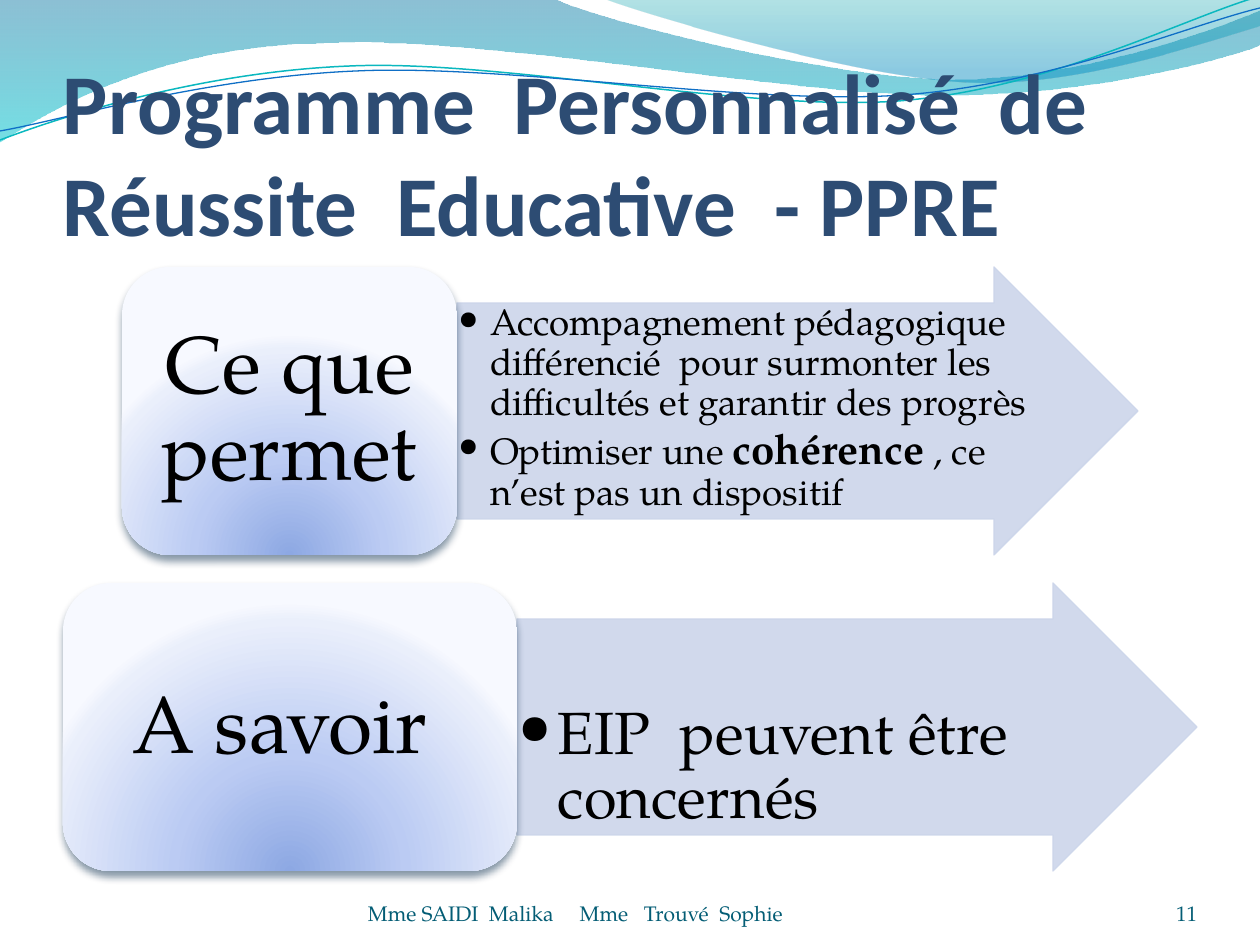
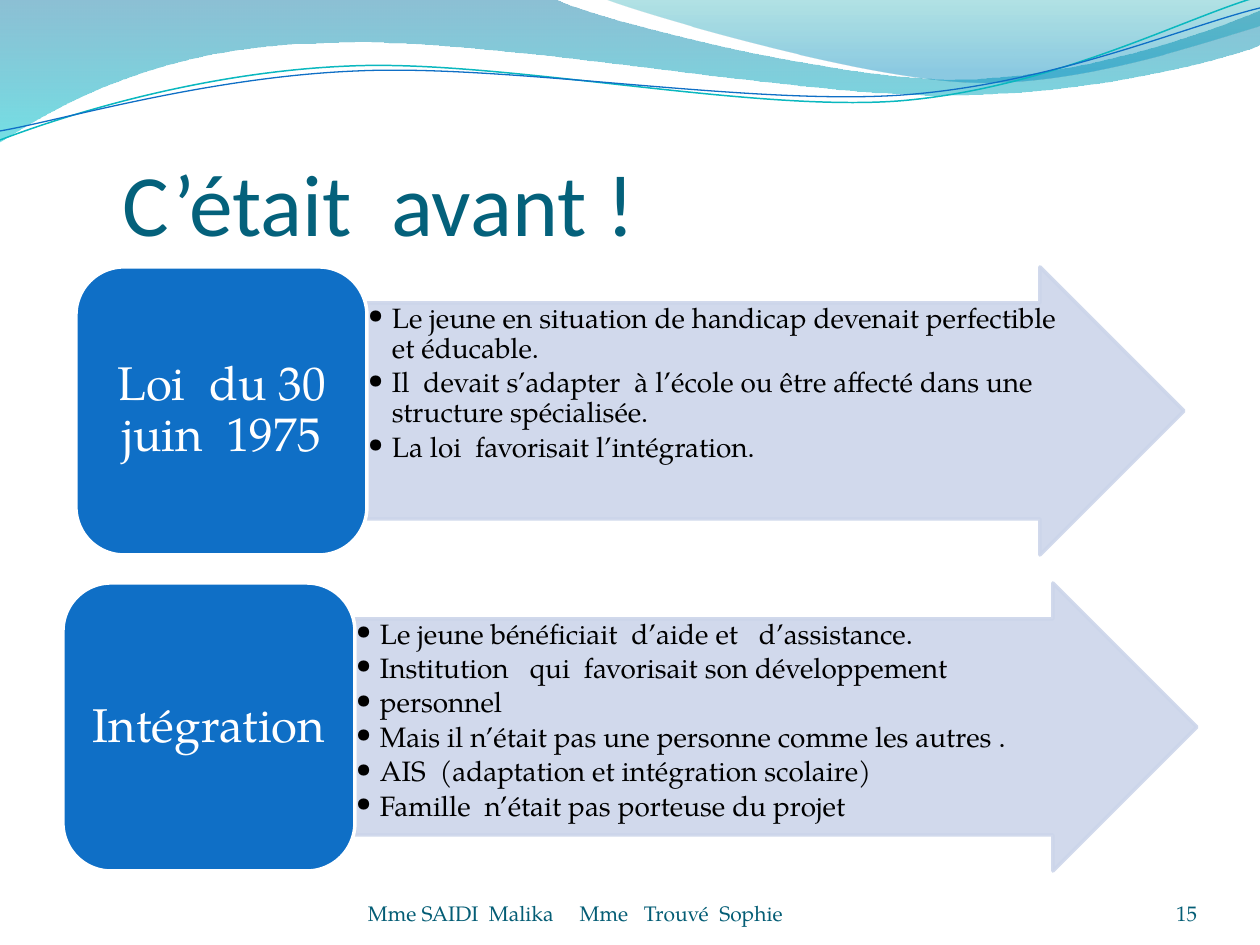
from dataclasses import dataclass

from lxml.etree import SubElement
from pptx import Presentation
from pptx.dml.color import RGBColor as RGB
from pptx.enum.shapes import MSO_SHAPE as SHAPE
from pptx.enum.text import MSO_ANCHOR as ANCHOR, PP_ALIGN as ALIGN
from pptx.oxml import parse_xml
from pptx.oxml.ns import nsdecls, qn
from pptx.util import Emu, Pt

SCALE = 914400 / 126
ROW_TOP, ROW_PITCH, ROW_HEIGHT = 267, 316, 288
LABEL_PAD = 14


@dataclass(frozen=True)
class Theme:
    head_font: str = "Calibri"
    body_font: str = "TeX Gyre Pagella"
    title: str = "04617B"
    title_bold: str = "2D4C73"
    footer: str = "045D75"
    text: str = "000000"
    light: str = "FFFFFF"
    blue: str = "0F6FC6"
    teal: str = "0AB8BF"
    arrow: str = "CCD5EA"
    shadow: str = "042747"
    wave: tuple = ((0, "0074A1", 45), (100, "00C6CF", 55))
    crest: tuple = ((0, "00A1A9", 30), (80, "008BBF", 45))
    glow: tuple = ((0, "8DA8E3", 100), (43, "BBCBF3", 100),
                   (93, "EAEFFB", 100), (100, "F7F9FF", 100))
    footer_size: int = 12


T = Theme()
LINEAR = '<a:lin ang="5400000" scaled="0"/>'
RADIAL = ('<a:path path="circle"><a:fillToRect l="50000" t="130000" '
          'r="50000" b="-30000"/></a:path>')

WAVE = [(0, 0), (554, -1), (600, 21, 837, 79, 955, 79), (1075, 79, 1207, 33, 1260, 11),
        (1261, 45), (1239, 55, 1096, 96, 940, 95), (784, 95, 481, 35, 324, 43),
        (163, 45, 58, 105, -1, 142)]
CREST = [(604, -1), (641, 14, 859, 78, 969, 82), (1079, 87, 1211, 40, 1260, 26), (1260, 0)]
TEAL_LINE = [(0, 140), (60, 117, 199, 72, 349, 66), (498, 59, 747, 112, 898, 101),
             (1050, 89, 1182, 19, 1257, -3)]
BLUE_LINE = [(0, 131), (59, 121, 207, 77, 357, 71), (508, 64, 752, 106, 903, 95),
             (1053, 84, 1186, 26, 1260, 8)]


def px(n):
    return Emu(round(n * SCALE))


def set_attrs(obj, fmt):
    for name, value in fmt.items():
        setattr(obj, name, value)


def solid(fill, color, alpha=100):
    fill.solid()
    fill.fore_color.rgb = RGB.from_string(color)
    if alpha < 100:
        clr = fill._xPr.find(".//" + qn("a:srgbClr"))
        SubElement(clr, qn("a:alpha"), val=str(alpha * 1000))


def outline(sp, color=None, width=1, alpha=100):
    if color is None:
        sp.line.fill.background()
        return
    solid(sp.line.fill, color, alpha)
    sp.line.width = Pt(width)


def gradient(sp, stops, shade):
    gs = "".join(f'<a:gs pos="{pos * 1000}"><a:srgbClr val="{color}">'
                 f'<a:alpha val="{alpha * 1000}"/></a:srgbClr></a:gs>'
                 for pos, color, alpha in stops)
    sp.fill.background()
    pr = sp._element.spPr
    pr.replace(pr.find(qn("a:noFill")), parse_xml(
        f'<a:gradFill {nsdecls("a")} rotWithShape="1"><a:gsLst>{gs}</a:gsLst>{shade}</a:gradFill>'))


def drop_shadow(sp):
    effects = sp._element.spPr.find(qn("a:effectLst"))
    shadow = SubElement(effects, qn("a:outerShdw"), blurRad=str(Pt(4.5)), dist=str(Pt(3)),
                        dir="5400000", rotWithShape="0")
    clr = SubElement(shadow, qn("a:srgbClr"), val=T.shadow)
    SubElement(clr, qn("a:alpha"), val="48000")


def add_curve(s, steps, close=False):
    first, *rest = steps
    points = [(px(x), px(y)) for step in rest for x, y in zip(step[::2], step[1::2])]
    builder = s.shapes.build_freeform(*map(px, first))
    builder.add_line_segments(points, close=close)
    sp = builder.convert_to_shape()
    sp.shadow.inherit = False
    sp.fill.background()
    segments = iter(sp._element.findall(".//" + qn("a:lnTo")))
    for step in rest:
        bend = next(segments)
        if len(step) == 6:
            bend.tag = qn("a:cubicBezTo")
            for _ in range(2):
                extra = next(segments)
                bend.append(extra[0])
                extra.getparent().remove(extra)
    return sp


def add_waves(s):
    for steps, stops in ((WAVE, T.wave), (CREST, T.crest)):
        sp = add_curve(s, steps, close=True)
        gradient(sp, stops, LINEAR)
        outline(sp)
    for steps, color, width in ((TEAL_LINE, T.teal, 0.85), (BLUE_LINE, T.blue, 0.75)):
        outline(add_curve(s, steps), color, width)


def add_frame(s, box, insets, anchor):
    tf = s.shapes.add_textbox(*map(px, box)).text_frame
    left, top, right, bottom = map(px, insets)
    set_attrs(tf, dict(word_wrap=True, vertical_anchor=anchor, margin_left=left,
                       margin_top=top, margin_right=right, margin_bottom=bottom))
    return tf


def add_run(p, text, size, color, font=T.body_font, bold=False):
    r = p.add_run()
    r.text = text
    set_attrs(r.font, dict(name=font, size=Pt(size), bold=bold))
    r.font.color.rgb = RGB.from_string(color)


def add_text(s, box, text, size, color, align=ALIGN.LEFT, insets=(0, 0, 0, 0),
             anchor=ANCHOR.BOTTOM, spacing=None, **fmt):
    p = add_frame(s, box, insets, anchor).paragraphs[0]
    set_attrs(p, dict(alignment=align, line_spacing=spacing))
    add_run(p, text, size, color, **fmt)


def add_shape(s, kind, box):
    sp = s.shapes.add_shape(kind, *map(px, box))
    sp.shadow.inherit = False
    return sp


def add_bullets(tf, items, size, indent):
    for i, runs in enumerate(items):
        p = tf.add_paragraph() if i else tf.paragraphs[0]
        set_attrs(p, dict(line_spacing=0.9, space_after=Pt(size * 0.15)))
        pr = p._p.get_or_add_pPr()
        pr.set("marL", str(px(indent)))
        pr.set("indent", str(-px(indent)))
        SubElement(pr, qn("a:buFont"), typeface=T.body_font)
        SubElement(pr, qn("a:buChar"), char="•")
        for text, *strong in [(runs,)] if isinstance(runs, str) else runs:
            add_run(p, text, strong[0] if strong else size, T.text, bold=bool(strong))


def add_arrow(s, box, items, size, indent, line, pad=1, lead=0):
    sp = add_shape(s, SHAPE.RIGHT_ARROW, box)
    sp.adjustments[0], sp.adjustments[1] = 0.75, 0.5
    solid(sp.fill, T.arrow, 90)
    outline(sp, T.arrow, line, 90)
    left, top, width, height = box
    shaft = (left, top + height // 8, width - height * 3 // 8, height * 3 // 4)
    tf = add_frame(s, shaft, (pad, pad + lead, pad, pad), ANCHOR.TOP)
    add_bullets(tf, items, size, indent)


def add_label(s, box, text, size, glowing):
    sp = add_shape(s, SHAPE.ROUNDED_RECTANGLE, box)
    if glowing:
        gradient(sp, T.glow, RADIAL)
        outline(sp)
        drop_shadow(sp)
    else:
        solid(sp.fill, T.blue)
        outline(sp, T.light, 2)
    left, top, width, height = box
    inner = (left + LABEL_PAD, top + LABEL_PAD, width - 2 * LABEL_PAD, height - 2 * LABEL_PAD)
    add_text(s, inner, text, size, T.text if glowing else T.light, ALIGN.CENTER,
             (24, 13, 24, 13) if glowing else (14, 8, 14, 8), ANCHOR.MIDDLE, 0.9)


def add_rows(s, rows, label_size, glowing):
    for i, (left, label_w, arrow_w, label, items, fmt) in enumerate(rows):
        top = ROW_TOP + i * ROW_PITCH
        add_arrow(s, (left + label_w, top, arrow_w, ROW_HEIGHT), items,
                  line=0.75 if glowing else 2, **fmt)
        add_label(s, (left, top, label_w, ROW_HEIGHT), label, label_size, glowing)


def add_slide(prs, number, title, size, color, bold=False, indent=0):
    s = prs.slides.add_slide(prs.slide_layouts[6])
    add_waves(s)
    add_text(s, (63, 97, 1134, 157), title, size, color, insets=(indent, 6, 0, 0),
             font=T.head_font, bold=bold)
    add_text(s, (368, 876, 462, 50), "Mme SAIDI  Malika     Mme   Trouvé  Sophie",
             T.footer_size, T.footer)
    add_text(s, (1092, 876, 105, 50), str(number), T.footer_size, T.footer, ALIGN.RIGHT)
    return s


def main():
    prs = Presentation()
    prs.slide_width, prs.slide_height = px(1260), px(945)

    s = add_slide(prs, 11, "Programme  Personnalisé  de  Réussite  Educative  - PPRE",
                  48.6, T.title_bold, bold=True)
    add_rows(s, [
        (122, 335, 681, "Ce que permet ", [
            "Accompagnement pédagogique différencié  pour surmonter les difficultés "
            "et garantir des progrès",
            [("Optimiser une ",), ("cohérence", 24), (" , ce n’est pas un dispositif",)],
        ], dict(size=21, indent=32)),
        (63, 454, 680, "A savoir ", ["EIP  peuvent être concernés"],
         dict(size=34, indent=39, pad=2, lead=82)),
    ], label_size=46, glowing=True)

    s = add_slide(prs, 15, "C’était  avant !", 50, T.title, indent=60)
    bullets = dict(size=16, indent=24)
    add_rows(s, [
        (76, 291, 817, "Loi  du 30 juin  1975", [
            "Le jeune en situation de handicap devenait perfectible et éducable.",
            "Il  devait s’adapter  à l’école ou être affecté dans une structure spécialisée.",
            "La loi  favorisait l’intégration.",
        ], bullets),
        (63, 292, 842, "Intégration ", [
            "Le jeune bénéficiait  d’aide et   d’assistance.",
            "Institution   qui  favorisait son développement",
            "personnel",
            "Mais il n’était pas une personne comme les autres .",
            "AIS  (adaptation et intégration scolaire)",
            "Famille  n’était pas porteuse du projet",
        ], bullets),
    ], label_size=27, glowing=False)

    prs.save("out.pptx")


if __name__ == "__main__":
    main()
